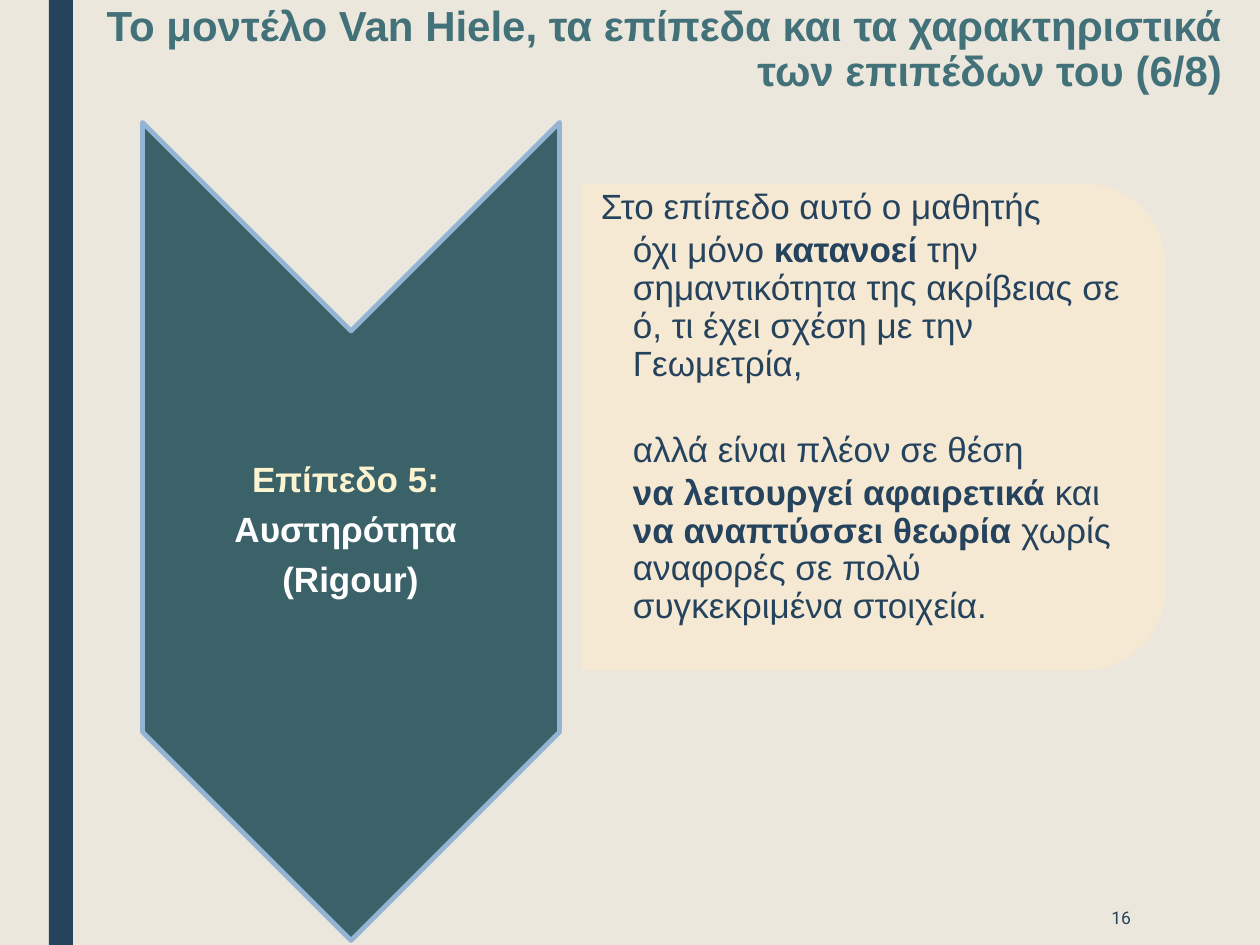
import pptx
import pptx.util
import pptx.dml.color
import pptx.enum.shapes
import pptx.enum.text
import lxml.etree

RGB = pptx.dml.color.RGBColor
SHAPE = pptx.enum.shapes.MSO_SHAPE
ALIGN = pptx.enum.text.PP_ALIGN
ANCHOR = pptx.enum.text.MSO_ANCHOR
Pt = pptx.util.Pt
SCALE = 914400 / 126

PAPER = RGB(0xEB, 0xE7, 0xDD)
NAVY = RGB(0x26, 0x43, 0x5D)
TEAL = RGB(0x43, 0x71, 0x79)
DEEP = RGB(0x3B, 0x62, 0x69)
SKY = RGB(0x93, 0xB5, 0xD3)
SAND = RGB(0xF8, 0xEA, 0xD4)
CREAM = RGB(0xFC, 0xF3, 0xD1)
WHITE = RGB(0xFF, 0xFF, 0xFF)

TITLE = "Το μοντέλο Van Hiele, τα επίπεδα και τα χαρακτηριστικά των επιπέδων του (6/8)"
LEVEL = [("Επίπεδο 5: ", CREAM), ("Αυστηρότητα ", WHITE), ("(Rigour)", WHITE)]
# Each paragraph: first-line indent in px, space before in points, runs of (text, bold)
BODY = [
    (-32, 0, [("Στο επίπεδο αυτό ο μαθητής", False)]),
    (0, 0, [("όχι μόνο ", False), ("κατανοεί", True),
            (" την σημαντικότητα της ακρίβειας σε ό, τι έχει σχέση με την Γεωμετρία,", False)]),
    (0, 24.5, [("αλλά είναι πλέον σε θέση", False)]),
    (0, 0, [("να λειτουργεί αφαιρετικά ", True), ("και ", False),
            ("να αναπτύσσει θεωρία", True),
            (" χωρίς αναφορές σε πολύ συγκεκριμένα στοιχεία.", False)]),
]
PAGE = "16"


def px(n):
    return pptx.util.Emu(round(n * SCALE))


def add_form(slide, kind, box, fill, turn=0):
    """Add a filled shape; box is left, top, width, height before the turn."""
    form = slide.shapes.add_shape(kind, *map(px, box))
    form.shadow.inherit = False
    form.rotation = turn
    form.fill.solid()
    form.fill.fore_color.rgb = fill
    form.line.fill.background()
    return form


def add_frame(slide, box, pads, anchor=ANCHOR.MIDDLE):
    """Add a wrapping text box; pads are left, top, right, bottom."""
    frame = slide.shapes.add_textbox(*map(px, box)).text_frame
    frame.word_wrap = True
    frame.vertical_anchor = anchor
    (frame.margin_left, frame.margin_top,
     frame.margin_right, frame.margin_bottom) = map(px, pads)
    return frame


def add_line(frame, runs, size, color, align, bold=None, face="Arial",
             lead=None, after=None):
    """Fill the first empty paragraph or add one; runs are (text, bold)."""
    line = frame.paragraphs[0]
    if line.runs:
        line = frame.add_paragraph()
    for text, heavy in runs:
        run = line.add_run()
        run.text = text
        if bold is None:
            run.font.bold = heavy
    font = line.font
    font.name, font.size, font.color.rgb = face, Pt(size), color
    font.bold = bold
    line.alignment = align
    if lead:
        line.line_spacing = lead
    if after:
        line.space_after = Pt(after)
    return line


def main():
    deck = pptx.Presentation()
    deck.slide_width, deck.slide_height = px(1260), px(945)
    slide = deck.slides.add_slide(deck.slide_layouts[6])
    slide.background.fill.solid()
    slide.background.fill.fore_color.rgb = PAPER

    add_form(slide, SHAPE.RECTANGLE, (49, 0, 24, 945), NAVY)

    frame = add_frame(slide, (84, 0, 1151, 125), (13, 6, 13, 6), ANCHOR.TOP)
    add_line(frame, [(TITLE, True)], 24, TEAL, ALIGN.RIGHT, bold=True, lead=0.89)

    arrow = add_form(slide, SHAPE.CHEVRON, (-58, 323, 818, 417), DEEP, 90)
    arrow.line.color.rgb = SKY
    arrow.line.width = Pt(2.75)
    frame = add_frame(slide, (142, 331, 417, 401), (1, 1, 1, 1))
    for text, color in LEVEL:
        add_line(frame, [(text, True)], 20, color, ALIGN.CENTER, bold=True,
                 lead=0.9, after=7)

    panel = add_form(slide, SHAPE.ROUND_2_SAME_RECTANGLE, (630, 135, 487, 584), SAND, 90)
    tint = panel.fill._xPr.find(".//" + pptx.oxml.ns.qn("a:srgbClr"))
    lxml.etree.SubElement(tint, pptx.oxml.ns.qn("a:alpha"), val="90000")
    frame = add_frame(slide, (581, 207, 561, 440), (20, 1, 1, 39))
    for indent, before, runs in BODY:
        line = add_line(frame, runs, 20, NAVY, ALIGN.LEFT, lead=0.9, after=3)
        line.space_before = Pt(before)
        props = line._p.get_or_add_pPr()
        props.set("marL", str(px(32)))
        props.set("indent", str(px(indent)))

    frame = add_frame(slide, (979, 890, 165, 55), (13, 6, 13, 6))
    add_line(frame, [(PAGE, False)], 10, NAVY, ALIGN.RIGHT, bold=False, face="Roboto")

    deck.save("out.pptx")


if __name__ == "__main__":
    main()
